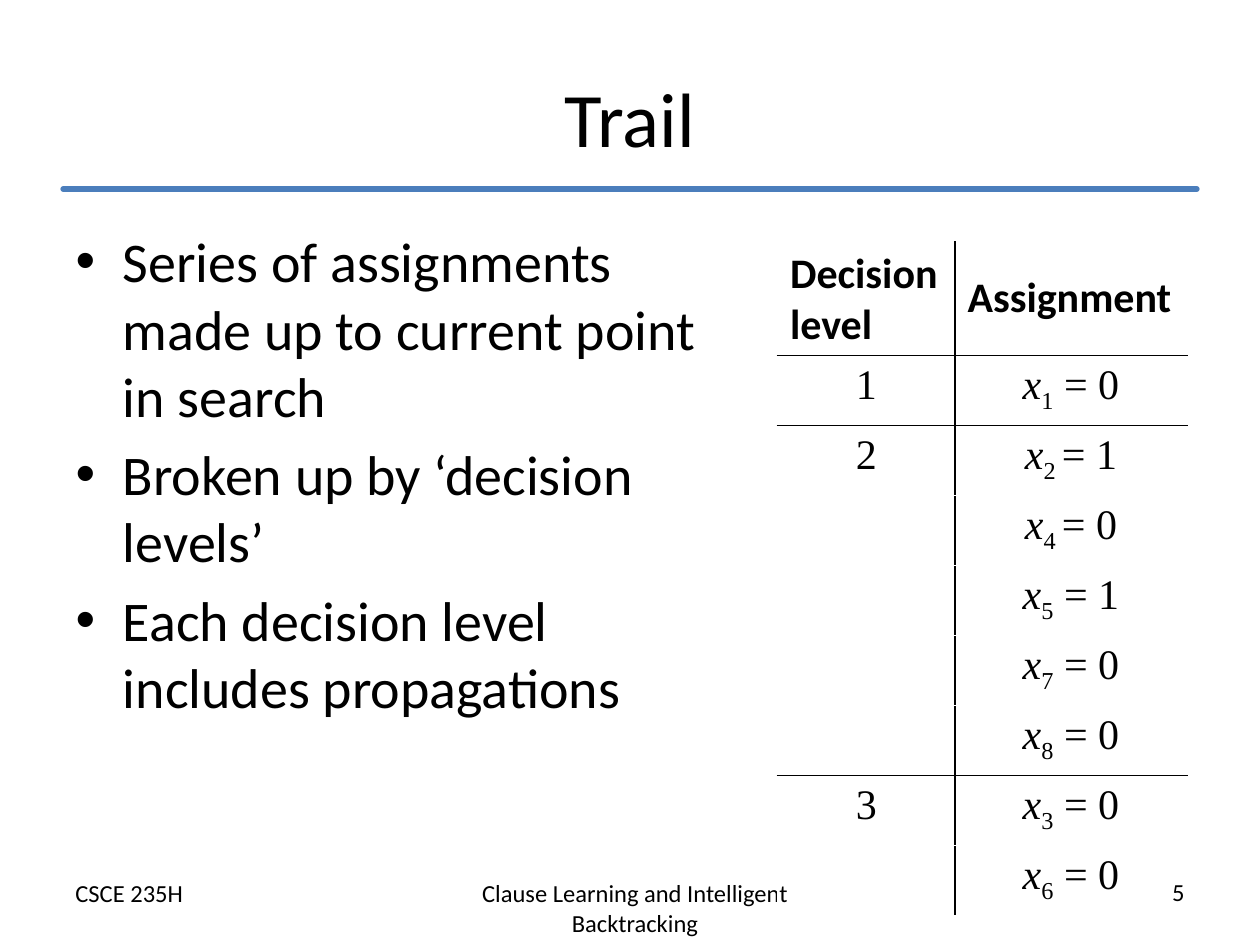
import dataclasses
import typing

import lxml.etree
import pptx
import pptx.dml.color
import pptx.enum.shapes
import pptx.enum.text
import pptx.oxml.ns
import pptx.util

Inches = pptx.util.Inches
Align = pptx.enum.text.PP_ALIGN
Anchor = pptx.enum.text.MSO_ANCHOR
qn = pptx.oxml.ns.qn


@dataclasses.dataclass(frozen=True)
class Theme:
    ink: str = "000000"
    rule: str = "4B7EBC"
    sans: str = "Calibri"
    serif: str = "Times New Roman"
    title: int = 44
    body: int = 32
    cell: int = 24
    foot: int = 14


@dataclasses.dataclass(frozen=True)
class Footer:
    text: str
    left: float
    top: float
    height: float
    align: Align


@dataclasses.dataclass(frozen=True)
class Step:
    level: str
    sub: str
    value: str


THEME = Theme()
POINTS = (
    "Series of assignments made up to current point in search",
    "Broken up by ‘decision levels’",
    "Each decision level includes propagations",
)
FOOTERS = (
    Footer("Clause Learning and Intelligent Backtracking", 3.58, 6.92, 0.57, Align.CENTER),
    Footer("CSCE 235H", 0.5, 6.92, 0.34, Align.LEFT),
    Footer("5", 6.58, 6.91, 0.34, Align.RIGHT),
)
STEPS = (
    Step("1", "1", " = 0"),
    Step("2", "2 ", "= 1"),
    Step("", "4 ", "= 0"),
    Step("", "5", " = 1"),
    Step("", "7", " = 0"),
    Step("", "8", " = 0"),
    Step("3", "3", " = 0"),
    Step("", "6", " = 0"),
)


def style(para, size: int, face: str, align: Align, bold: bool = False) -> None:
    """Format a whole paragraph."""
    para.alignment = align
    font = para.font
    font.size, font.name, font.bold = pptx.util.Pt(size), face, bold
    font.color.rgb = pptx.dml.color.RGBColor.from_string(THEME.ink)


def place(shape, left: float, top: float, width: float, height: float) -> None:
    """Move and size a shape in inches."""
    shape.left, shape.top = Inches(left), Inches(top)
    shape.width, shape.height = Inches(width), Inches(height)


def add_text(slide) -> None:
    """Fill the title and body placeholders."""
    title, body = slide.shapes.title, slide.placeholders[1]
    place(title, 0.5, 0.3, 9, 1.25)
    title.text_frame.text = "Trail"
    style(title.text_frame.paragraphs[0], THEME.title, THEME.sans, Align.CENTER)
    place(body, 0.5, 1.75, 5.17, 4.5)
    body.text_frame.text = "\n".join(POINTS)
    for para in body.text_frame.paragraphs:
        style(para, THEME.body, THEME.sans, Align.LEFT)


def add_rule(slide) -> None:
    """Draw the line under the title."""
    kind = pptx.enum.shapes.MSO_CONNECTOR.STRAIGHT
    rule = slide.shapes.add_connector(kind, Inches(0.5), Inches(1.5), Inches(9.5), Inches(1.5))
    rule.line.width = pptx.util.Pt(3)
    rule.line.color.rgb = pptx.dml.color.RGBColor.from_string(THEME.rule)
    rule.line._get_or_add_ln().set("cap", "rnd")
    lxml.etree.SubElement(rule._element.spPr, qn("a:effectLst"))


def add_footer(slide, foot: Footer) -> None:
    """Add one text box of the bottom strip."""
    box = slide.shapes.add_textbox(
        Inches(foot.left), Inches(foot.top), Inches(2.92), Inches(foot.height)
    )
    box.text_frame.word_wrap = True
    box.text_frame.text = foot.text
    style(box.text_frame.paragraphs[0], THEME.foot, THEME.sans, foot.align)


def add_edges(cell, sides: typing.Iterable[str]) -> None:
    """Draw cell borders, with sides given in the order L, R, T, B."""
    props = cell._tc.get_or_add_tcPr()
    for side in sides:
        line = lxml.etree.SubElement(props, qn(f"a:ln{side}"), w=str(pptx.util.Pt(1)))
        fill = lxml.etree.SubElement(line, qn("a:solidFill"))
        lxml.etree.SubElement(fill, qn("a:srgbClr"), val=THEME.ink)


def fill_step(row, step: Step) -> None:
    """Write one assignment into a table row."""
    level, term = row.cells
    level.text = step.level
    para = term.text_frame.paragraphs[0]
    name, sub, value = (para.add_run() for _ in range(3))
    name.text, sub.text, value.text = "x", step.sub, step.value
    name.font.italic = True
    sub._r.get_or_add_rPr().set("baseline", "-25000")
    for cell in row.cells:
        style(cell.text_frame.paragraphs[0], THEME.cell, THEME.serif, Align.CENTER)


def add_trail(slide) -> None:
    """Build the table of decision levels."""
    count = len(STEPS) + 1
    frame = slide.shapes.add_table(
        count, 2, Inches(6.17), Inches(1.92), Inches(3.25), Inches(4.9)
    )
    table = frame.table
    table.first_row = table.horz_banding = False
    for col, width in zip(table.columns, (1.41, 1.84)):
        col.width = Inches(width)
    for cell, text in zip(table.rows[0].cells, ("Decision\nlevel", "Assignment")):
        cell.text = text
        cell.vertical_anchor = Anchor.MIDDLE
        for para in cell.text_frame.paragraphs:
            style(para, THEME.cell, THEME.sans, Align.LEFT, True)
    starts = {i for i, step in enumerate(STEPS, 1) if step.level}
    for i, row in enumerate(table.rows):
        row.height = Inches(0.5 if i else 0.9)
        if i:
            fill_step(row, STEPS[i - 1])
        ends = ("T" if i in starts else "") + ("B" if i + 1 in starts else "")
        for cell, side in zip(row.cells, "RL"):
            add_edges(cell, side + ends)
            cell.fill.background()


def main() -> None:
    """Build and save the slide."""
    deck = pptx.Presentation()
    deck.slide_width, deck.slide_height = Inches(10), Inches(7.5)
    slide = deck.slides.add_slide(deck.slide_layouts[1])
    for foot in FOOTERS:
        add_footer(slide, foot)
    add_rule(slide)
    add_text(slide)
    add_trail(slide)
    deck.save("out.pptx")


if __name__ == "__main__":
    main()
